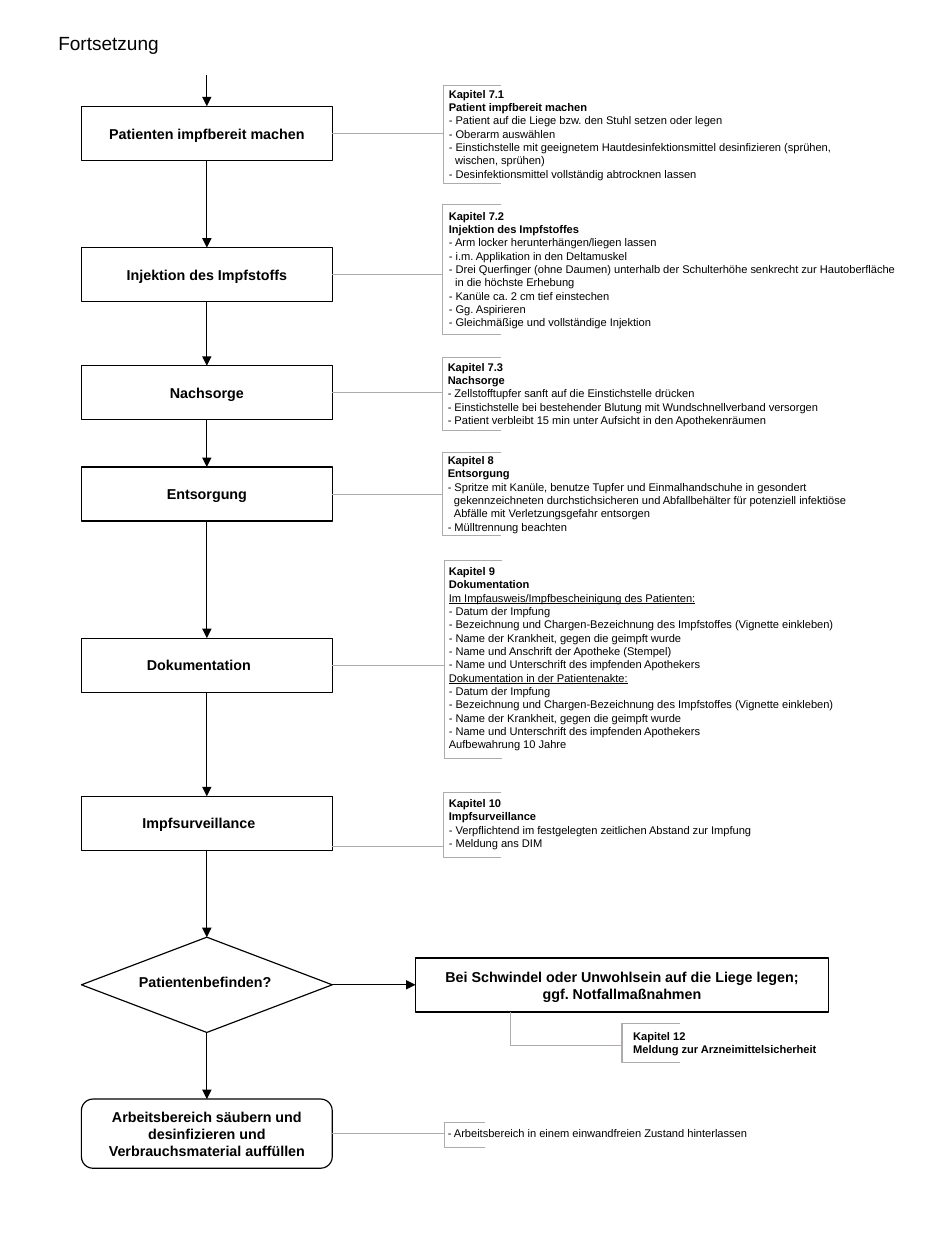
from lxml import etree
from pptx import Presentation
from pptx.dml.color import RGBColor
from pptx.enum import shapes, text
from pptx.oxml.ns import qn
from pptx.util import Pt

BLACK = RGBColor(0x00, 0x00, 0x00)
WHITE = RGBColor(0xFF, 0xFF, 0xFF)
GREY = RGBColor(0xAF, 0xAB, 0xAB)
FONT = "Arial"

# step, top, extra right inset, chapter headings, note lines,
# note left, note top, bracket left, bracket top, bracket height
STEPS = [
    ("Patienten impfbereit machen", 67, 0, ["Kapitel 7.1", "Patient impfbereit machen"], [
        "- Patient auf die Liege bzw. den Stuhl setzen oder legen",
        "- Oberarm auswählen",
        "- Einstichstelle mit geeignetem Hautdesinfektionsmittel desinfizieren (sprühen,",
        "wischen, sprühen)",
        "- Desinfektionsmittel vollständig abtrocknen lassen",
    ], 275.7, 51.4, 279.2, 53.8, 61.6),
    ("Injektion des Impfstoffs", 156, 0, ["Kapitel 7.2", "Injektion des Impfstoffes"], [
        "- Arm locker herunterhängen/liegen lassen",
        "- i.m. Applikation in den Deltamuskel",
        "- Drei Querfinger (ohne Daumen) unterhalb der Schulterhöhe senkrecht zur Hautoberfläche",
        "in die höchste Erhebung",
        "- Kanüle ca. 2 cm tief einstechen",
        "- Gg. Aspirieren",
        "- Gleichmäßige und vollständige Injektion",
    ], 275.7, 128.2, 278.8, 128.9, 82),
    ("Nachsorge", 230.4, 0, ["Kapitel 7.3", "Nachsorge"], [
        "- Zellstofftupfer sanft auf die Einstichstelle drücken",
        "- Einstichstelle bei bestehender Blutung mit Wundschnellverband versorgen",
        "- Patient verbleibt 15 min unter Aufsicht in den Apothekenräumen",
    ], 275, 223.4, 278.8, 225.2, 46),
    ("Entsorgung", 294.2, 0, ["Kapitel 8", "Entsorgung"], [
        "- Spritze mit Kanüle, benutze Tupfer und Einmalhandschuhe in gesondert",
        "gekennzeichneten durchstichsicheren und Abfallbehälter für potenziell infektiöse",
        "Abfälle mit Verletzungsgefahr entsorgen",
        "- Mülltrennung beachten",
    ], 275, 282.2, 278.8, 285, 52.2),
    ("Dokumentation", 402, 10, ["Kapitel 9", "Dokumentation"], [
        "Im Impfausweis/Impfbescheinigung des Patienten:",
        "- Datum der Impfung",
        "- Bezeichnung und Chargen-Bezeichnung des Impfstoffes (Vignette einkleben)",
        "- Name der Krankheit, gegen die geimpft wurde",
        "- Name und Anschrift der Apotheke (Stempel)",
        "- Name und Unterschrift des impfenden Apothekers",
        "Dokumentation in der Patientenakte:",
        "- Datum der Impfung",
        "- Bezeichnung und Chargen-Bezeichnung des Impfstoffes (Vignette einkleben)",
        "- Name der Krankheit, gegen die geimpft wurde",
        "- Name und Unterschrift des impfenden Apothekers",
        "Aufbewahrung 10 Jahre",
    ], 275.7, 352.1, 279.8, 353.2, 124.6),
    ("Impfsurveillance", 501.6, 10, ["Kapitel 10", "Impfsurveillance"], [
        "- Verpflichtend im festgelegten zeitlichen Abstand zur Impfung",
        "- Meldung ans DIM",
    ], 275.7, 498.1, 279.2, 499.3, 41),
]
DECISION = "Patientenbefinden?"
EMERGENCY = "Bei Schwindel oder Unwohlsein auf die Liege legen;\nggf. Notfallmaßnahmen"
SAFETY = ["Kapitel 12", "Meldung zur Arzneimittelsicherheit"]
CLEANUP = "Arbeitsbereich säubern und desinfizieren und Verbrauchsmaterial auffüllen"
CLEANUP_NOTE = ["- Arbeitsbereich in einem einwandfreien Zustand hinterlassen"]
CONTINUATIONS = ("wischen", "in die", "gekennzeichneten", "Abfälle")

STEP_LEFT, STEP_WIDTH, STEP_HEIGHT = 51.3, 158, 34
STEP_RIGHT = STEP_LEFT + STEP_WIDTH
AXIS = STEP_LEFT + STEP_WIDTH / 2
DECISION_TOP, DECISION_HEIGHT = 590.4, 60
CLEANUP_TOP, CLEANUP_HEIGHT = 692.4, 43.6
EMERGENCY_LEFT, EMERGENCY_TOP, EMERGENCY_WIDTH = 261.8, 603.5, 260
SAFETY_LEFT, SAFETY_TOP, SAFETY_HEIGHT = 391.8, 645, 24.2
SURVEILLANCE_LINK = 533
CONTINUATION_INDENT = 3.9

presentation = Presentation()
presentation.slide_width, presentation.slide_height = Pt(595.25), Pt(793.75)
slide = presentation.slides.add_slide(presentation.slide_layouts[5])


def style(paragraph, size, bold=False, underline=False):
    for run in paragraph.runs:
        run.font.name, run.font.size = FONT, Pt(size)
        run.font.bold, run.font.underline = bold, underline
        run.font.color.rgb = BLACK


def add_line(x1, y1, x2, y2, color=GREY, arrow=False):
    line = slide.shapes.add_connector(
        shapes.MSO_CONNECTOR.STRAIGHT, Pt(x1), Pt(y1), Pt(x2), Pt(y2))
    line.line.color.rgb, line.line.width = color, Pt(0.5)
    if arrow:
        etree.SubElement(line.line._get_or_add_ln(), qn("a:tailEnd"), type="triangle")
    etree.SubElement(line._element.spPr, qn("a:effectLst"))


def add_box(kind, label, left, top, width, height, right_inset=0):
    """Outlined flowchart shape with a bold, centred label."""
    box = slide.shapes.add_shape(kind, Pt(left), Pt(top), Pt(width), Pt(height))
    box.shadow.inherit = False
    box.fill.solid()
    box.fill.fore_color.rgb = WHITE
    box.line.color.rgb, box.line.width = BLACK, Pt(0.75)
    frame = box.text_frame
    frame.word_wrap = True
    frame.vertical_anchor = text.MSO_ANCHOR.MIDDLE
    frame.margin_right = Pt(7.2 + right_inset)
    frame.text = label
    for paragraph in frame.paragraphs:
        paragraph.alignment = text.PP_ALIGN.CENTER
        style(paragraph, 9, bold=True)
    return box


def add_bracket(left, top, height, width=36.5):
    builder = slide.shapes.build_freeform(Pt(left + width), Pt(top))
    builder.add_line_segments(
        [(Pt(left), Pt(top)), (Pt(left), Pt(top + height)), (Pt(left + width), Pt(top + height))],
        close=False)
    bracket = builder.convert_to_shape()
    bracket.shadow.inherit = False
    bracket.fill.background()
    bracket.line.color.rgb, bracket.line.width = GREY, Pt(0.75)


def add_note(headings, lines, left, top, width, height):
    """Bold headings, then items; lines ending in a colon are underlined."""
    frame = slide.shapes.add_textbox(Pt(left), Pt(top), Pt(width), Pt(height)).text_frame
    frame.word_wrap = True
    frame.text = "\n".join(headings + lines)
    for index, paragraph in enumerate(frame.paragraphs):
        if paragraph.text.startswith(CONTINUATIONS):
            paragraph._p.get_or_add_pPr().set("marL", str(Pt(CONTINUATION_INDENT)))
        style(paragraph, 7, bold=index < len(headings), underline=paragraph.text.endswith(":"))


title = slide.shapes.title
title.left, title.top, title.width, title.height = Pt(29.5), Pt(16.3), Pt(78.5), Pt(21.6)
title.text_frame.text = "Fortsetzung"
title.text_frame.word_wrap = False
title.text_frame.auto_size = text.MSO_AUTO_SIZE.NONE
title.text_frame.vertical_anchor = text.MSO_ANCHOR.TOP
title.text_frame.paragraphs[0].alignment = text.PP_ALIGN.LEFT
style(title.text_frame.paragraphs[0], 12)

process = shapes.MSO_SHAPE.FLOWCHART_PROCESS
for label, top, inset, headings, lines, note_left, note_top, left, bracket_top, height in STEPS:
    add_box(process, label, STEP_LEFT, top, STEP_WIDTH, STEP_HEIGHT, inset)
    link = SURVEILLANCE_LINK if label == "Impfsurveillance" else top + STEP_HEIGHT / 2
    add_line(STEP_RIGHT, link, left, link)
    add_bracket(left, bracket_top, height)
    add_note(headings, lines, note_left, note_top, 297.4, height)

diamond = add_box(shapes.MSO_SHAPE.DIAMOND, DECISION,
                  STEP_LEFT, DECISION_TOP, STEP_WIDTH, DECISION_HEIGHT, right_inset=2)
diamond.text_frame.word_wrap = False
diamond.text_frame.margin_bottom = Pt(7.2)
add_box(process, EMERGENCY, EMERGENCY_LEFT, EMERGENCY_TOP, EMERGENCY_WIDTH, STEP_HEIGHT)
decision_middle = DECISION_TOP + DECISION_HEIGHT / 2
add_line(STEP_RIGHT, decision_middle, EMERGENCY_LEFT, decision_middle, BLACK, arrow=True)

safety_link, safety_branch = 658.4, 321.4
add_line(safety_branch, EMERGENCY_TOP + STEP_HEIGHT, safety_branch, safety_link)
add_line(safety_branch, safety_link, SAFETY_LEFT, safety_link)
add_bracket(SAFETY_LEFT, SAFETY_TOP, SAFETY_HEIGHT)
add_note(SAFETY, [], SAFETY_LEFT, SAFETY_TOP, 180, SAFETY_HEIGHT)

add_box(shapes.MSO_SHAPE.FLOWCHART_ALTERNATE_PROCESS, CLEANUP,
        STEP_LEFT, CLEANUP_TOP, STEP_WIDTH, CLEANUP_HEIGHT)
cleanup_middle = CLEANUP_TOP + CLEANUP_HEIGHT / 2
add_line(STEP_RIGHT, cleanup_middle, 279.8, cleanup_middle)
add_bracket(279.8, 707, 15.8, width=25.5)
add_note([], CLEANUP_NOTE, 275, 706.3, 211.7, 15.8)

starts = [47.5] + [step[1] + STEP_HEIGHT for step in STEPS] + [DECISION_TOP + DECISION_HEIGHT]
ends = [step[1] for step in STEPS] + [DECISION_TOP, CLEANUP_TOP]
for start, end in zip(starts, ends):
    add_line(AXIS, start, AXIS, end, BLACK, arrow=True)

presentation.save("out.pptx")
